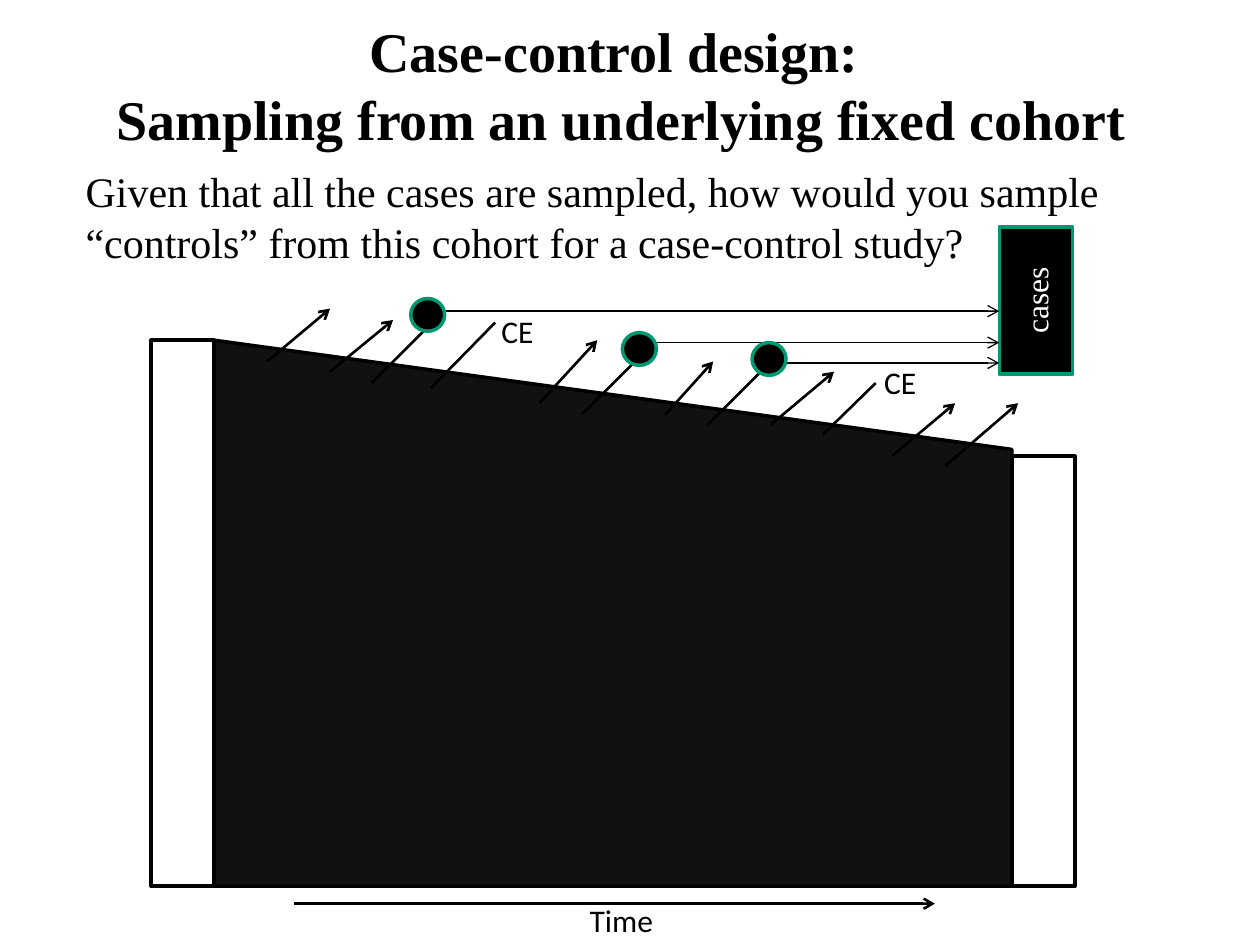
from lxml import etree
from pptx import Presentation
from pptx.dml.color import RGBColor
from pptx.enum import shapes, text
from pptx.oxml.ns import qn
from pptx.util import Pt

SERIF, SANS = "Times New Roman", "Calibri"
BLACK, WHITE, COHORT, GREEN = "000000", "FFFFFF", "111111", "009771"
SHAPE = shapes.MSO_SHAPE


def color(value):
    return RGBColor.from_string(value)


def write(frame, lines, align, font, spacing=None, **frame_format):
    settings = dict(word_wrap=False, auto_size=text.MSO_AUTO_SIZE.SHAPE_TO_FIT_TEXT,
                    vertical_anchor=text.MSO_ANCHOR.TOP,
                    margin_left=Pt(7.2), margin_right=Pt(7.2),
                    margin_top=Pt(3.6), margin_bottom=Pt(3.6))
    for key, value in (settings | frame_format).items():
        setattr(frame, key, value)
    for index, line in enumerate(lines):
        paragraph = frame.add_paragraph() if index else frame.paragraphs[0]
        paragraph.alignment = align
        if spacing:
            paragraph.line_spacing = Pt(spacing)
        run = paragraph.add_run()
        run.text = line
        for key, value in font.items():
            if key == "color":
                run.font.color.rgb = color(value)
            else:
                setattr(run.font, key, value)


def add_label(slide, box, lines, font, **options):
    label = slide.shapes.add_textbox(*map(Pt, box))
    write(label.text_frame, lines, text.PP_ALIGN.LEFT, font, **options)


def add_block(slide, kind, box, fill, outline):
    block = slide.shapes.add_shape(kind, *map(Pt, box))
    block.shadow.inherit = False
    block.fill.solid()
    block.fill.fore_color.rgb = color(fill)
    block.line.color.rgb = color(outline)
    block.line.width = Pt(2)
    return block


def add_line(slide, start, end, width=1.5, arrow=False):
    line = slide.shapes.add_connector(shapes.MSO_CONNECTOR.STRAIGHT,
                                      *map(Pt, (*start, *end)))
    line.line.color.rgb = color(BLACK)
    line.line.width = Pt(width)
    if arrow:
        etree.SubElement(line.line._get_or_add_ln(), qn("a:tailEnd"), type="arrow")
    etree.SubElement(line._element.spPr, qn("a:effectLst"))


def place_title(slide, box):
    title = slide.shapes.title
    title.left, title.top, title.width, title.height = map(Pt, box)
    write(title.text_frame,
          ["Case-control design: ", "Sampling from an underlying fixed cohort"],
          text.PP_ALIGN.CENTER,
          dict(name=SERIF, size=Pt(32), bold=True, color=BLACK), spacing=39)


def place_question(slide, box):
    add_label(slide, box,
              ["Given that all the cases are sampled, how would you sample",
               "“controls” from this cohort for a case-control study?"],
              dict(name=SERIF, size=Pt(24), color=BLACK), spacing=29.2,
              vertical_anchor=text.MSO_ANCHOR.MIDDLE)


def place_cohort(slide, box):
    left, top, width, height = box
    bar, drop = 36, 66.2
    sans = dict(name=SANS, size=Pt(18), color=BLACK)

    def at(point):
        return left + point[0], top + point[1]

    # Shrinking cohort between its first and last members
    body = add_block(slide, SHAPE.FLOWCHART_MANUAL_INPUT,
                     (left + bar, top, width - 2 * bar, height), COHORT, BLACK)
    body._element.spPr.xfrm.set("flipH", "1")
    add_block(slide, SHAPE.RECTANGLE,
              (left + width - bar, top + drop, bar, height - drop), WHITE, BLACK)
    add_block(slide, SHAPE.RECTANGLE, (left, top, bar, height), WHITE, BLACK)

    # Members who leave the cohort
    for start, end in [((66.2, 12.2), (102.2, -18)), ((102.2, 18), (138.2, -11.5)),
                       ((221.8, 36), (254.9, 0)), ((293.8, 42.5), (321.1, 12.2)),
                       ((354.2, 48.2), (390.2, 18)), ((423.4, 66.2), (459.4, 36)),
                       ((453.6, 72), (495.4, 36))]:
        add_line(slide, at(start), at(end), arrow=True)

    # Members who become cases
    for x, y in [(126, 24.5), (246.2, 42.5), (318.2, 48.2)]:
        add_line(slide, at((x, y)), at((x + 30, y - 30)))

    # Competing events
    for start, end, corner in [((159.8, 27.4), (196.6, -10.1), (193, -19.4)),
                               ((383.8, 54), (414, 24.5), (411.8, 9.4))]:
        add_line(slide, at(start), at(end))
        add_label(slide, (*at(corner), 33.1, 28.8), ["CE"], sans)

    # Time axis
    axis = height + 10
    add_line(slide, at((81.4, axis)), at((447.8, axis)), arrow=True)
    add_label(slide, (*at((243.4, axis - 5)), 51.1, 28.8), ["Time"], sans)


def place_cases(slide, box):
    left, top = box[:2]
    cases = add_block(slide, SHAPE.RECTANGLE, box, BLACK, GREEN)
    write(cases.text_frame, ["cases"], text.PP_ALIGN.CENTER,
          dict(name=SERIF, size=Pt(18), color=WHITE), word_wrap=True,
          auto_size=text.MSO_AUTO_SIZE.NONE,
          vertical_anchor=text.MSO_ANCHOR.MIDDLE)
    cases.text_frame._txBody.bodyPr.set("vert", "vert270")

    # Each case with its arrow to the box: circle corner, arrow start
    for (x, y), (start, level) in [((-336.3, 41), (-326.9, 48.2)),
                                   ((-215.3, 60.5), (-203.8, 66.2)),
                                   ((-141.2, 66.2), (-131.8, 77.8))]:
        add_line(slide, (left + start, top + level), (left, top + level),
                 width=0.75, arrow=True)
        add_block(slide, SHAPE.OVAL, (left + x, top + y, 19.4, 18.7), BLACK, GREEN)


def main():
    deck = Presentation()
    deck.slide_width, deck.slide_height = Pt(720), Pt(540)
    slide = deck.slides.add_slide(deck.slide_layouts[5])
    place_title(slide, (56.9, 5, 596.2, 85))
    place_question(slide, (41.8, 90.7, 599, 65.5))
    place_cohort(slide, (86.4, 194.4, 527.8, 312))
    place_cases(slide, (571, 129.6, 41.8, 84.2))
    deck.save("out.pptx")


if __name__ == "__main__":
    main()
